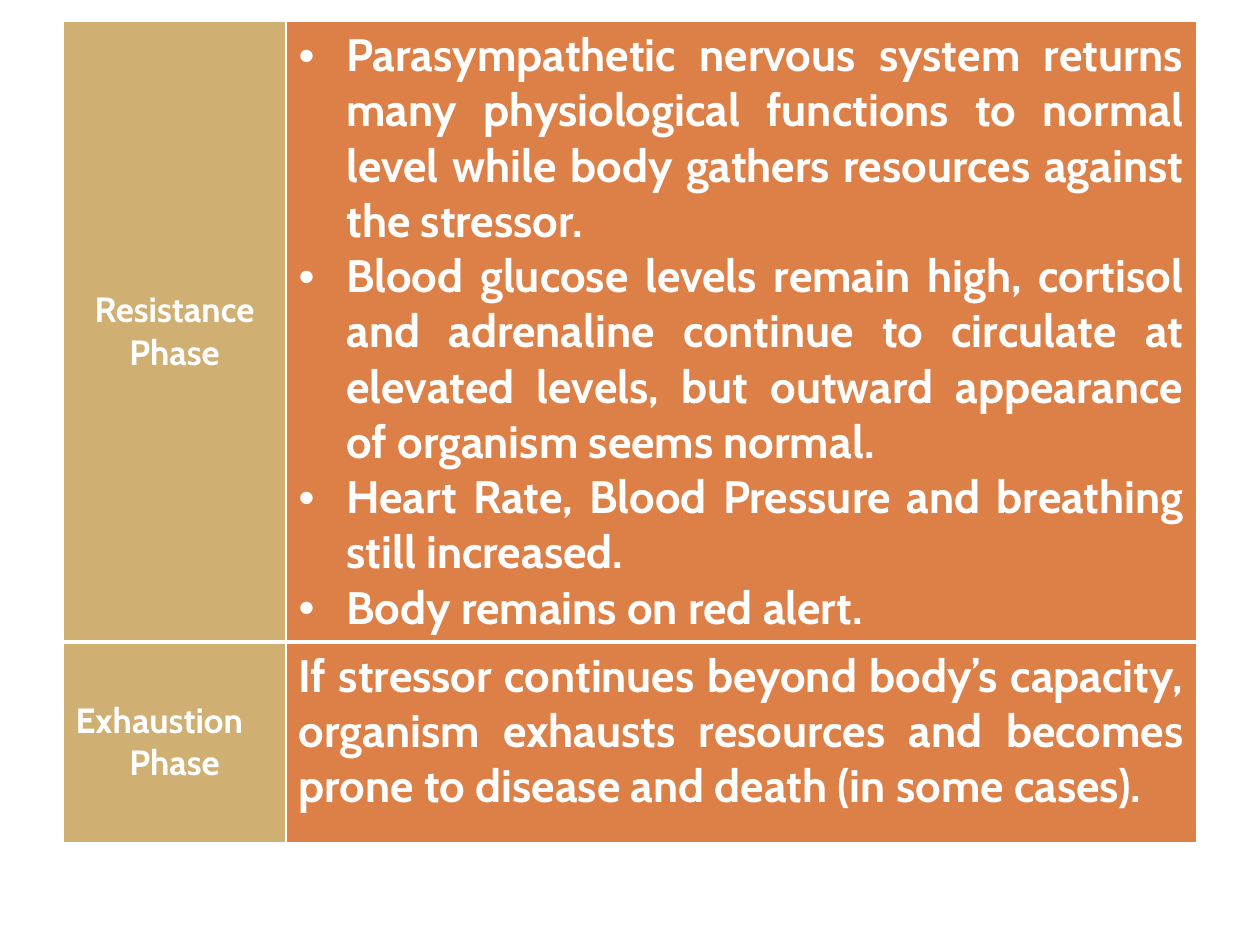
import pptx
import pptx.dml.color
import pptx.enum.text
import pptx.oxml.ns
import pptx.util
from lxml import etree

WHITE = pptx.dml.color.RGBColor(0xFF, 0xFF, 0xFF)
SAND = pptx.dml.color.RGBColor(0xD0, 0xAF, 0x72)
ORANGE = pptx.dml.color.RGBColor(0xDD, 0x80, 0x47)
CENTER = pptx.enum.text.PP_ALIGN.CENTER
JUSTIFY = pptx.enum.text.PP_ALIGN.JUSTIFY
TOP = pptx.enum.text.MSO_ANCHOR.TOP
MIDDLE = pptx.enum.text.MSO_ANCHOR.MIDDLE

RESISTANCE = [
    "Parasympathetic nervous system returns many physiological functions to normal level while body gathers resources against the stressor.",
    "Blood glucose levels remain high, cortisol and adrenaline continue to circulate at elevated levels, but outward appearance of organism seems normal.",
    "Heart Rate, Blood Pressure and breathing still increased.",
    "Body remains on red alert.",
]
EXHAUSTION = "If stressor continues beyond body’s capacity, organism exhausts resources and becomes prone to disease and death (in some cases)."


class PhaseSlide:
    label_font = {"name": "Cabin", "size": pptx.util.Pt(20), "bold": True}
    detail_font = {**label_font, "size": pptx.util.Pt(26)}
    indent = pptx.util.Inches(0.38)

    def __init__(self, deck):
        self.deck = deck
        self.slide = deck.slides.add_slide(deck.slide_layouts[6])

    def across(self, share):
        return round(self.deck.slide_width * share)

    def down(self, share):
        return round(self.deck.slide_height * share)

    def table(self, left, top, columns, rows):
        frame = self.slide.shapes.add_table(
            len(rows), len(columns), self.across(left), self.down(top),
            self.across(sum(columns)), self.down(sum(rows)))
        for column, share in zip(frame.table.columns, columns):
            column.width = self.across(share)
        for row, share in zip(frame.table.rows, rows):
            row.height = self.down(share)
        return frame.table

    def borders(self, cell, widths):
        properties = cell._tc.get_or_add_tcPr()
        for side, width in widths.items():
            line = etree.SubElement(
                properties, pptx.oxml.ns.qn(f"a:ln{side}"), w=str(pptx.util.Pt(width)))
            fill = etree.SubElement(line, pptx.oxml.ns.qn("a:solidFill"))
            etree.SubElement(fill, pptx.oxml.ns.qn("a:srgbClr"), val=str(WHITE))

    def bullet(self, paragraph):
        properties = paragraph._p.get_or_add_pPr()
        properties.set("marL", str(self.indent))
        properties.set("indent", str(-self.indent))
        etree.SubElement(properties, pptx.oxml.ns.qn("a:buFont"), typeface="Arial")
        etree.SubElement(properties, pptx.oxml.ns.qn("a:buChar"), char="•")

    def cell(self, cell, lines, color, font, anchor, widths, bulleted=False):
        self.borders(cell, widths)
        cell.fill.solid()
        cell.fill.fore_color.rgb = color
        cell.vertical_anchor = anchor
        for number, (text, alignment) in enumerate(lines):
            frame = cell.text_frame
            paragraph = frame.add_paragraph() if number else frame.paragraphs[0]
            paragraph.alignment = alignment
            if bulleted:
                self.bullet(paragraph)
            run = paragraph.add_run()
            run.text = text
            for attribute, value in font.items():
                setattr(run.font, attribute, value)
            run.font.color.rgb = WHITE


def main():
    deck = pptx.Presentation()
    deck.slide_width = pptx.util.Inches(10)
    deck.slide_height = pptx.util.Inches(7.5)
    page = PhaseSlide(deck)
    phases = page.table(0.05, 0.17 / 7.5, [0.177, 0.723], [4.91 / 7.5, 1.59 / 7.5])
    contents = [
        ([("Resistance Phase", CENTER)], [(text, JUSTIFY) for text in RESISTANCE], True),
        ([("Exhaustion", JUSTIFY), ("Phase", CENTER)], [(EXHAUSTION, JUSTIFY)], False),
    ]
    edges = [{"L": 1, "R": 1, "T": 1, "B": 3}, {"L": 1, "R": 1, "T": 3, "B": 1}]
    for row, ((label, details, bulleted), widths) in enumerate(zip(contents, edges)):
        page.cell(phases.cell(row, 0), label, SAND, page.label_font, MIDDLE, widths)
        page.cell(phases.cell(row, 1), details, ORANGE, page.detail_font, TOP, widths, bulleted)
    deck.save("out.pptx")


if __name__ == "__main__":
    main()
